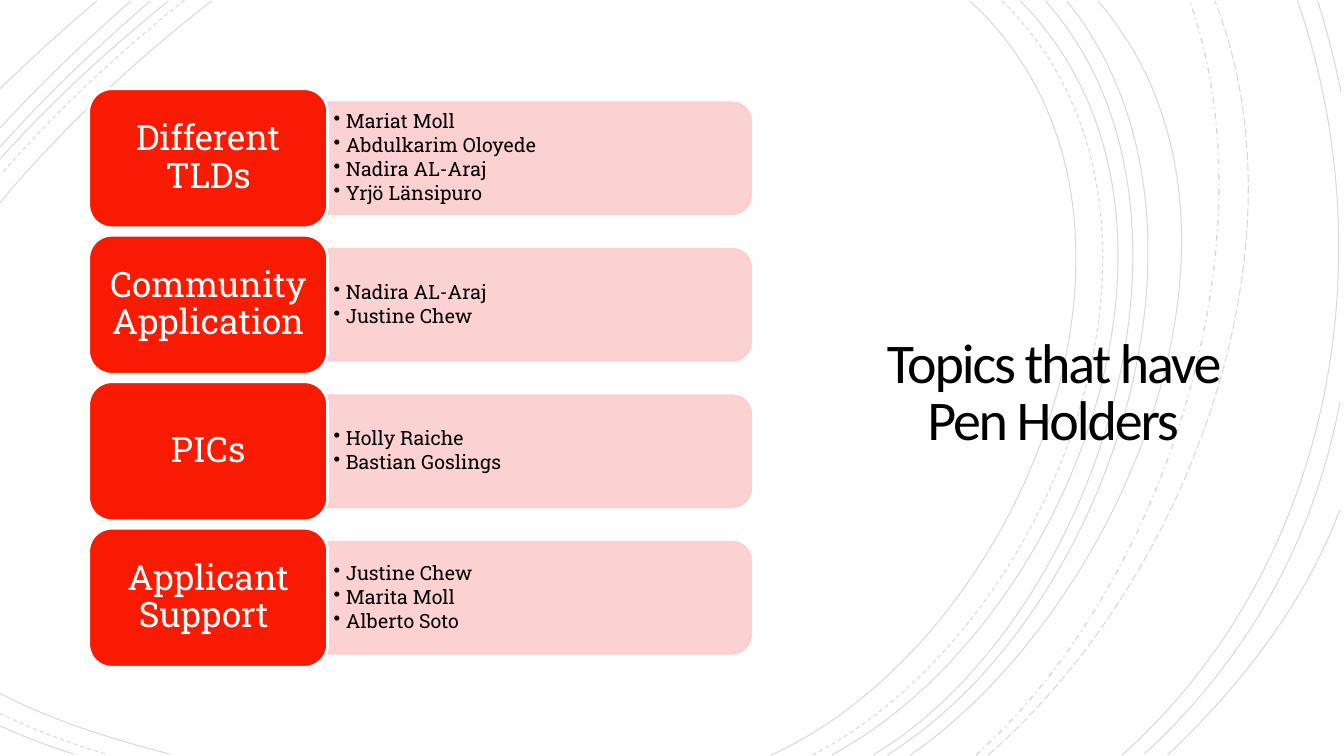
"""Build the slide listing pen holders per topic over a backdrop of thin arcs."""
from lxml import etree
from pptx import Presentation
from pptx import util as u
from pptx.dml.color import RGBColor
from pptx.enum import dml, shapes, text
from pptx.oxml import ns

THEME = {
    "ink": "000000", "paper": "FFFFFF", "red": "F81B02", "pink": "FCCDCC",
    "title_font": "Calibri", "body_font": "Roboto Slab",
    "title": 40, "topic": 25, "name": 14,
}


def paint(fill, color, opacity=100):
    """Fill with a solid theme colour at a given opacity in percent."""
    fill.solid()
    fill.fore_color.rgb = RGBColor.from_string(THEME[color])
    if opacity < 100:
        clr = fill._xPr.find(".//" + ns.qn("a:srgbClr"))
        etree.SubElement(clr, ns.qn("a:alpha"), val=str(opacity * 1000))


def write(sp, lines, size, font, color, spacing, insets, align):
    """Write paragraphs into a shape, centred vertically and styled alike."""
    tf = sp.text_frame
    tf.text = "\n".join(lines)
    tf.word_wrap = True
    tf.vertical_anchor = text.MSO_ANCHOR.MIDDLE
    tf.margin_left = tf.margin_right = u.Inches(insets[0])
    tf.margin_top = tf.margin_bottom = u.Inches(insets[1])
    for p in tf.paragraphs:
        p.alignment = align
        p.line_spacing = spacing
        f = p.runs[0].font
        f.size, f.name = u.Pt(THEME[size]), THEME[font]
        f.color.rgb = RGBColor.from_string(THEME[color])
    return tf.paragraphs


prs = Presentation()
prs.slide_width, prs.slide_height = u.Inches(13.33), u.Inches(7.5)
s = prs.slides.add_slide(prs.slide_layouts[6])
paint(s.background.fill, "paper")

solid, dash = dml.MSO_LINE.SOLID, dml.MSO_LINE.DASH
dash_dot, long_dash = dml.MSO_LINE.DASH_DOT, dml.MSO_LINE.LONG_DASH
arcs = [
    (solid, (7.65, 7.49), (10.16, 6.35), (11.88, 2.09), (9.62, 0.01)),
    (solid, (0, 6.88), (0.52, 7.15), (1.13, 7.34), (1.68, 7.48)),
    (solid, (2.1, 0.01), (1.34, 0.6), (0.62, 1.27), (0, 2.01)),
    (dash, (8.06, 7.49), (10.46, 6.25), (12.08, 2.12), (9.94, 0.01)),
    (dash, (0, 7.08), (0.34, 7.24), (0.7, 7.38), (1.05, 7.48)),
    (dash, (1.83, 0), (1.18, 0.52), (0.56, 1.1), (0.01, 1.73)),
    (solid, (8.25, 7.49), (10.61, 6.22), (12.21, 2.13), (10.12, 0.01)),
    (solid, (0, 7.2), (0.23, 7.31), (0.48, 7.4), (0.73, 7.48)),
    (solid, (1.67, 0.01), (1.08, 0.49), (0.51, 1.01), (0, 1.58)),
    (solid, (8.66, 7.49), (10.87, 6.16), (12.21, 2.08), (10.37, 0.01)),
    (solid, (1.49, 0.01), (0.97, 0.46), (0.46, 0.94), (0, 1.46)),
    (solid, (8.8, 7.49), (11, 6.12), (12.33, 2.16), (10.58, 0.01)),
    (solid, (1.3, 0.01), (0.84, 0.41), (0.41, 0.83), (0, 1.27)),
    (solid, (9.03, 7.49), (11.13, 6.03), (12.78, 2.2), (10.89, 0.01)),
    (solid, (0.96, 0.01), (0.63, 0.29), (0.31, 0.58), (0, 0.88)),
    (dash_dot, (9.68, 7.49), (11.54, 5.83), (12.65, 2.41), (11.8, 0.01)),
    (long_dash, (9.8, 7.49), (11.73, 5.81), (13.02, 2.51), (12.05, 0.01)),
    (solid, (11.13, 7.49), (13.2, 5.64), (13.76, 2.59), (12.87, 0.01)),
    (solid, (11.35, 7.48), (12.38, 6.53), (13.03, 5.36), (13.29, 3.99)),
    (solid, (13.3, 0.91), (13.24, 0.61), (13.16, 0.3), (13.07, 0.01)),
    (solid, (11.58, 7.49), (12.31, 6.8), (12.93, 6), (13.29, 5.06)),
]
backdrop = s.shapes.add_group_shape()
for style, *knots in arcs:
    points = [tuple(map(u.Inches, knot)) for knot in knots]
    builder = backdrop.shapes.build_freeform(*points[0])
    builder.add_line_segments(points[1:], close=False)
    sp = builder.convert_to_shape()
    outline = sp._element.find(".//" + ns.qn("a:path"))
    segments = outline.findall(ns.qn("a:lnTo"))
    curve = etree.SubElement(outline, ns.qn("a:cubicBezTo"))
    for segment in segments:
        curve.append(segment[0])
        outline.remove(segment)
    sp.shadow.inherit = False
    sp.fill.background()
    paint(sp.line.fill, "ink", 15)
    sp.line.width = u.Pt(1 if style == dash_dot else 0.75)
    sp.line.dash_style = style

title = s.shapes.add_textbox(*map(u.Inches, (8.53, 2.57, 3.83, 2.69)))
p = write(title, ["Topics that have Pen Holders"], "title", "title_font", "ink",
          0.85, (0.25, 0.25), text.PP_ALIGN.CENTER)[0]
p.runs[0]._r.get_or_add_rPr().set("spc", "-150")

topics = [
    ("Different TLDs",
     ["Mariat Moll", "Abdulkarim Oloyede", "Nadira AL-Araj", "Yrjö Länsipuro"]),
    ("Community Application", ["Nadira AL-Araj", "Justine Chew"]),
    ("PICs", ["Holly Raiche", "Bastian Goslings"]),
    ("Applicant Support ", ["Justine Chew", "Marita Moll", "Alberto Soto"]),
]
left, top, topic_w, topic_h = 0.88, 0.88, 2.37, 1.38
pitch = (5.24 - top) / (len(topics) - 1)
panel_x, panel_w, panel_h = left + topic_w, 4.2, 1.11
names_w, names_h = 4.15, 1

for row, (topic, names) in enumerate(topics):
    y = top + row * pitch
    middle = y + topic_h / 2

    panel = s.shapes.add_shape(
        shapes.MSO_SHAPE.ROUND_2_SAME_RECTANGLE,
        u.Inches(panel_x + (panel_w - panel_h) / 2), u.Inches(middle - panel_w / 2),
        u.Inches(panel_h), u.Inches(panel_w))
    panel.rotation = 90
    panel.shadow.inherit = False
    paint(panel.fill, "pink", 90)
    paint(panel.line.fill, "pink", 90)
    panel.line.width = u.Pt(1.25)

    box = s.shapes.add_textbox(u.Inches(panel_x), u.Inches(middle - names_h / 2),
                               u.Inches(names_w), u.Inches(names_h))
    for p in write(box, names, "name", "body_font", "ink", 0.9, (0.06, 0.03),
                   text.PP_ALIGN.LEFT):
        p.level = 1
        p.space_after = u.Pt(2)
        pPr = p._p.get_or_add_pPr()
        pPr.set("marL", str(u.Inches(0.12)))
        pPr.set("indent", str(-u.Inches(0.12)))
        etree.SubElement(pPr, ns.qn("a:buChar"), char="•")

    card = s.shapes.add_shape(shapes.MSO_SHAPE.ROUNDED_RECTANGLE, u.Inches(left),
                              u.Inches(y), u.Inches(topic_w), u.Inches(topic_h))
    card.shadow.inherit = False
    paint(card.fill, "red")
    paint(card.line.fill, "paper")
    card.line.width = u.Pt(2)
    write(card, [topic], "topic", "body_font", "paper", 0.9, (0.1, 0.05),
          text.PP_ALIGN.CENTER)

prs.save("out.pptx")
